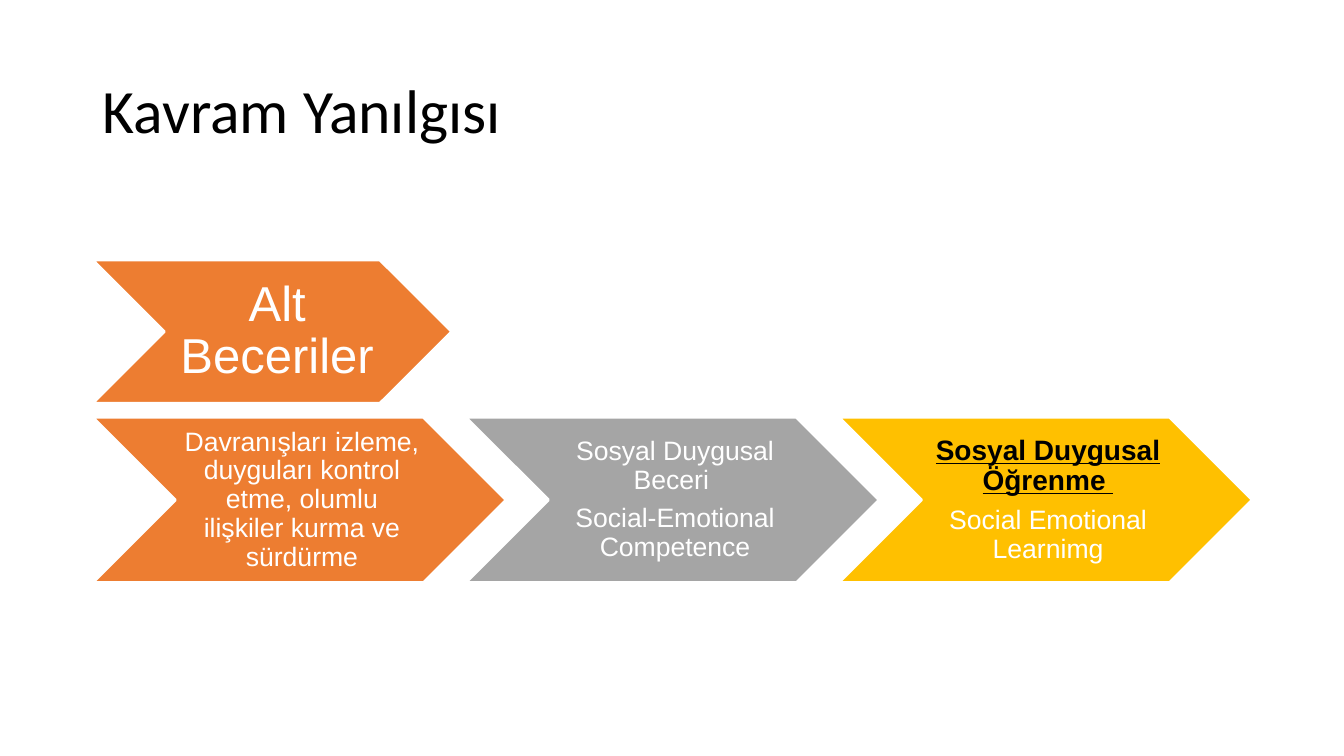
from pptx import Presentation
from pptx.dml.color import RGBColor
from pptx.enum.shapes import MSO_SHAPE
from pptx.enum.text import MSO_ANCHOR, PP_ALIGN
from pptx.util import Inches, Pt

CHEVRON = MSO_SHAPE.CHEVRON
MIDDLE = MSO_ANCHOR.MIDDLE
LEFT, CENTER = PP_ALIGN.LEFT, PP_ALIGN.CENTER
TITLE_ONLY = 5

ORANGE, GRAY, GOLD = "ED7D31", "A5A5A5", "FFC000"
WHITE, BLACK = "FFFFFF", "000000"

ROW_LEFT = 0.92
STEP_PITCH = 3.7


def color(value):
    return RGBColor.from_string(value)


class SlideBuilder:
    title_font = "Calibri"
    body_font = "Arial"
    line_spacing = 0.9
    space_ratio = 0.35

    def __init__(self, presentation):
        self.slide = presentation.slides.add_slide(presentation.slide_layouts[TITLE_ONLY])

    def format_frame(self, text_frame, insets):
        text_frame.word_wrap = True
        text_frame.vertical_anchor = MIDDLE
        left, other = insets
        text_frame.margin_left = Inches(left)
        text_frame.margin_right = Inches(other)
        text_frame.margin_top = text_frame.margin_bottom = Inches(0.03)

    def fill_paragraph(self, paragraph, text, size, font_name, text_color, alignment, emphasis=False):
        paragraph.text = text
        paragraph.alignment = alignment
        paragraph.line_spacing = self.line_spacing
        font = paragraph.runs[0].font
        font.name = font_name
        font.size = Pt(size)
        font.bold = font.underline = emphasis
        font.color.rgb = color(text_color)

    def title(self, text, left, top, width, height):
        title = self.slide.shapes.title
        title.left, title.top = Inches(left), Inches(top)
        title.width, title.height = Inches(width), Inches(height)
        self.format_frame(title.text_frame, (0.1, 0.1))
        self.fill_paragraph(title.text_frame.paragraphs[0], text, 44, self.title_font, BLACK, LEFT)

    def chevron(self, left, top, width, height, fill, insets, lines):
        shape = self.slide.shapes.add_shape(
            CHEVRON, Inches(left), Inches(top), Inches(width), Inches(height))
        shape.shadow.inherit = False
        shape.fill.solid()
        shape.fill.fore_color.rgb = color(fill)
        shape.line.color.rgb = color(WHITE)
        shape.line.width = Pt(2)
        text_frame = shape.text_frame
        self.format_frame(text_frame, insets)
        for index, (text, size, text_color, emphasis) in enumerate(lines):
            paragraph = text_frame.add_paragraph() if index else text_frame.paragraphs[0]
            self.fill_paragraph(paragraph, text, size, self.body_font, text_color, CENTER, emphasis)
            if index < len(lines) - 1:
                paragraph.space_after = Pt(size * self.space_ratio)


def main():
    presentation = Presentation()
    presentation.slide_width = Inches(13.33)
    presentation.slide_height = Inches(7.5)
    builder = SlideBuilder(presentation)
    builder.title("Kavram Yanılgısı", ROW_LEFT, 0.4, 11.5, 1.45)

    steps = [
        (ORANGE, [("Davranışları izleme, duyguları kontrol etme, olumlu ilişkiler kurma ve sürdürme",
                   19, WHITE, False)]),
        (GRAY, [("Sosyal Duygusal Beceri ", 19, WHITE, False),
                ("Social-Emotional Competence", 19, WHITE, False)]),
        (GOLD, [("Sosyal Duygusal Öğrenme ", 20, BLACK, True),
                ("Social Emotional Learnimg", 19, WHITE, False)]),
    ]
    for index, (fill, lines) in enumerate(steps):
        builder.chevron(ROW_LEFT + index * STEP_PITCH, 4.14, 4.1, 1.64, fill, (0.08, 0.03), lines)

    builder.chevron(ROW_LEFT, 2.58, 3.56, 1.42, ORANGE, (0.15, 0.05),
                    [("Alt Beceriler", 35, WHITE, False)])
    presentation.save("out.pptx")


if __name__ == "__main__":
    main()
